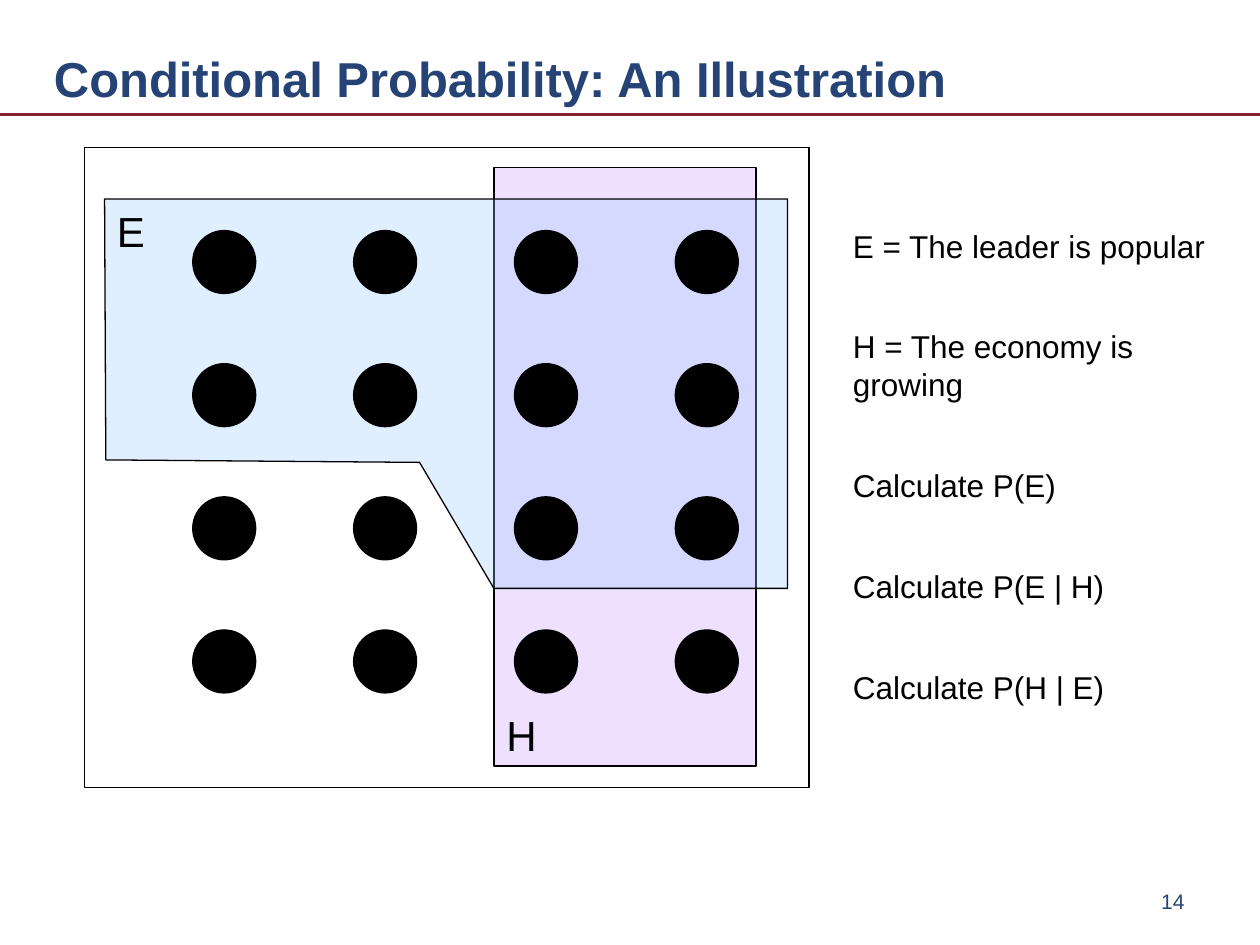
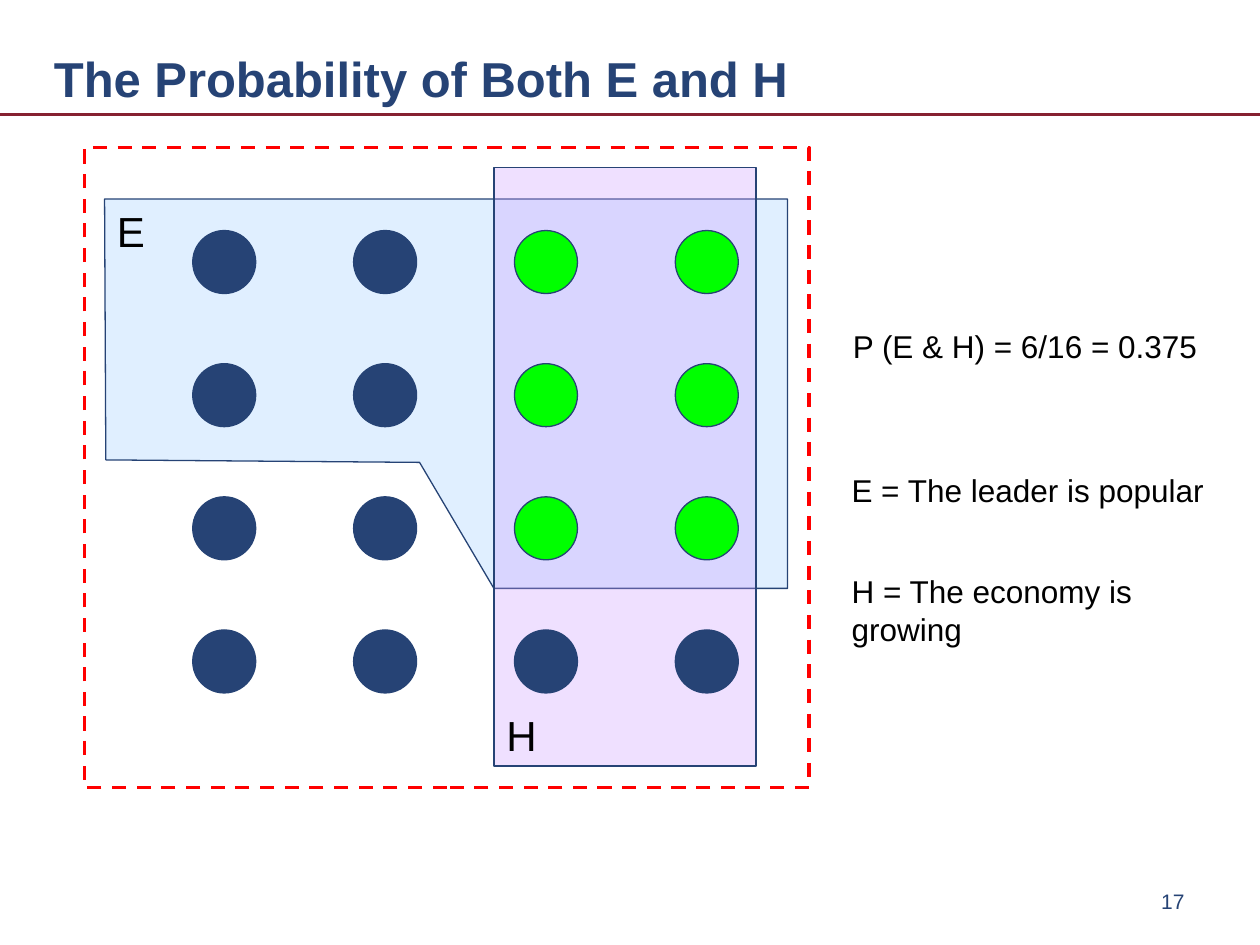
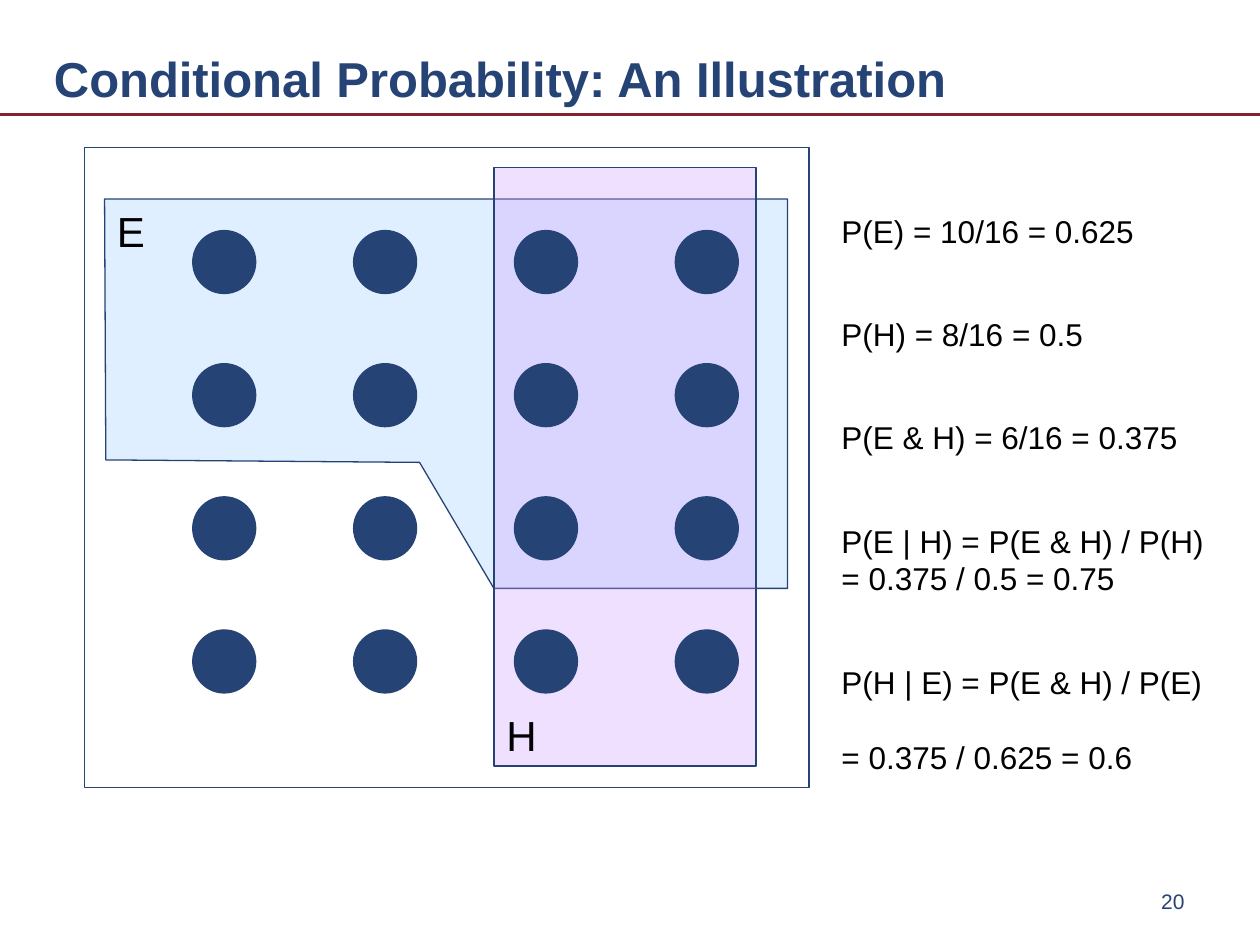
"""Build three slides on conditional probability with a dot diagram of events E and H."""
from itertools import product

from lxml import etree
from pptx import Presentation
from pptx.dml.color import RGBColor
from pptx.enum import dml, shapes, text
from pptx.oxml.ns import qn
from pptx.util import Inches, Pt

COLORS = {"navy": "264375", "rule": "862131", "black": "000000", "red": "FF0000",
          "green": "00FF00", "event_e": "99CCFF", "event_h": "CC99FF"}
FONT = "Arial"
OPACITY = 30

FRAME = (0.67, 1.17, 5.75, 5.08)
H_AREA = (3.92, 1.33, 2.08, 4.75)
E_OUTLINE = [(0.83, 1.58), (6.25, 1.58), (6.25, 4.67), (3.92, 4.67), (3.33, 3.67), (0.84, 3.65)]
LABELS = {"E": (0.83, 1.58, 0.58, 0.5), "H": (3.92, 5.58, 0.58, 0.5)}
GRID = 4
DOT_SIZE = 0.5
FIRST_DOT, LAST_DOT = (1.53, 1.83), (5.36, 5)
E_AND_H = set(product((2, 3), (0, 1, 2)))

NOTE_WIDTH = 3.08
NOTE_HEIGHTS = {1: 0.4, 2: 0.7}
LEADER = ("E = The leader is popular", 1)
ECONOMY = ("H = The economy is growing", 2)

SLIDES = [
    {"title": "Conditional Probability: An Illustration", "number": 14, "ink": "black",
     "areas": "HE", "frame": ("black", 0.75, None), "marked": set(),
     "stacks": [(6.67, 1.75, 0.4, [LEADER, ECONOMY, ("Calculate P(E)", 1),
                                   ("Calculate P(E | H)", 1), ("Calculate P(H | E)", 1)])]},
    {"title": "The Probability of Both E and H", "number": 17, "ink": "navy",
     "areas": "EH", "frame": ("red", 2, dml.MSO_LINE.DASH), "marked": E_AND_H,
     "stacks": [(6.67, 2.55, 0.4, [("P (E & H) = 6/16 = 0.375", 1)]),
                (6.66, 3.69, 0.4, [LEADER, ECONOMY])]},
    {"title": "Conditional Probability: An Illustration", "number": 20, "ink": "navy",
     "areas": "EH", "frame": ("navy", 0.75, None), "marked": set(),
     "stacks": [(6.58, 1.63, 0.42, [("P(E) = 10/16 = 0.625", 1), ("P(H) = 8/16 = 0.5", 1),
                                    ("P(E & H) = 6/16 = 0.375", 1),
                                    ("P(E | H) = P(E & H) / P(H)\n= 0.375 / 0.5 = 0.75", 2),
                                    ("P(H | E) = P(E & H) / P(E) \n= 0.375 / 0.625 = 0.6", 2)])]},
]


def rgb(name):
    return RGBColor.from_string(COLORS[name])


def inches(values):
    return [Inches(value) for value in values]


def add_text(parent, box, words, size, color="black", bold=False, align=text.PP_ALIGN.LEFT,
             anchor=text.MSO_ANCHOR.TOP, grow=True):
    frame = parent.shapes.add_textbox(*inches(box)).text_frame
    frame.word_wrap = True
    frame.vertical_anchor = anchor
    if grow:
        frame.auto_size = text.MSO_AUTO_SIZE.SHAPE_TO_FIT_TEXT
    paragraph = frame.paragraphs[0]
    paragraph.text = words
    paragraph.alignment = align
    font = paragraph.font
    font.name, font.size, font.bold = FONT, Pt(size), bold
    font.color.rgb = rgb(color)


def paint(shape, fill, line, width=0.75, dash=None, opacity=None):
    shape.shadow.inherit = False
    if fill:
        shape.fill.solid()
        shape.fill.fore_color.rgb = rgb(fill)
    else:
        shape.fill.background()
    if opacity:
        tint = shape.element.spPr.find(qn("a:solidFill"))[0]
        etree.SubElement(tint, qn("a:alpha"), val=str(opacity * 1000))
    shape.line.color.rgb = rgb(line)
    shape.line.width = Pt(width)
    if dash:
        shape.line.dash_style = dash


def add_area(diagram, event, ink):
    if event == "E":
        start, *corners = [inches(corner) for corner in E_OUTLINE]
        outline = diagram.shapes.build_freeform(*start)
        outline.add_line_segments(corners, close=True)
        area = outline.convert_to_shape()
    else:
        area = diagram.shapes.add_shape(shapes.MSO_SHAPE.RECTANGLE, *inches(H_AREA))
    paint(area, f"event_{event.lower()}", ink, opacity=OPACITY)
    add_text(diagram, LABELS[event], event, 24)


def add_diagram(slide, content):
    diagram = slide.shapes.add_group_shape()
    ink = content["ink"]
    for event in content["areas"]:
        add_area(diagram, event, ink)
    frame = diagram.shapes.add_shape(shapes.MSO_SHAPE.RECTANGLE, *inches(FRAME))
    paint(frame, None, *content["frame"])
    for cell in product(range(GRID), repeat=2):
        corner = [first + (last - first) * step / (GRID - 1)
                  for first, last, step in zip(FIRST_DOT, LAST_DOT, cell)]
        dot = diagram.shapes.add_shape(shapes.MSO_SHAPE.FLOWCHART_CONNECTOR,
                                       *inches((*corner, DOT_SIZE, DOT_SIZE)))
        paint(dot, "green" if cell in content["marked"] else ink, ink)


def add_notes(slide, left, top, gap, notes):
    for words, lines in notes:
        height = NOTE_HEIGHTS[lines]
        add_text(slide, (left, top, NOTE_WIDTH, height), words, 18)
        top += height + gap


def add_furniture(slide, title, number):
    rule = slide.shapes.add_connector(shapes.MSO_CONNECTOR.STRAIGHT, *inches((0, 0.91, 10, 0.91)))
    rule.line.color.rgb = rgb("rule")
    rule.line.width = Pt(2)
    etree.SubElement(rule.element.spPr, qn("a:effectLst"))
    middle = text.MSO_ANCHOR.MIDDLE
    add_text(slide, (0.33, 0.15, 9, 0.94), title, 28, "navy", bold=True, anchor=middle, grow=False)
    add_text(slide, (7.17, 6.95, 2.33, 0.4), str(number), 12, "navy",
             align=text.PP_ALIGN.RIGHT, anchor=middle, grow=False)


def main():
    deck = Presentation()
    deck.slide_width, deck.slide_height = Inches(10), Inches(7.5)
    for content in SLIDES:
        slide = deck.slides.add_slide(deck.slide_layouts[6])
        add_furniture(slide, content["title"], content["number"])
        add_diagram(slide, content)
        for stack in content["stacks"]:
            add_notes(slide, *stack)
    deck.save("out.pptx")


if __name__ == "__main__":
    main()
